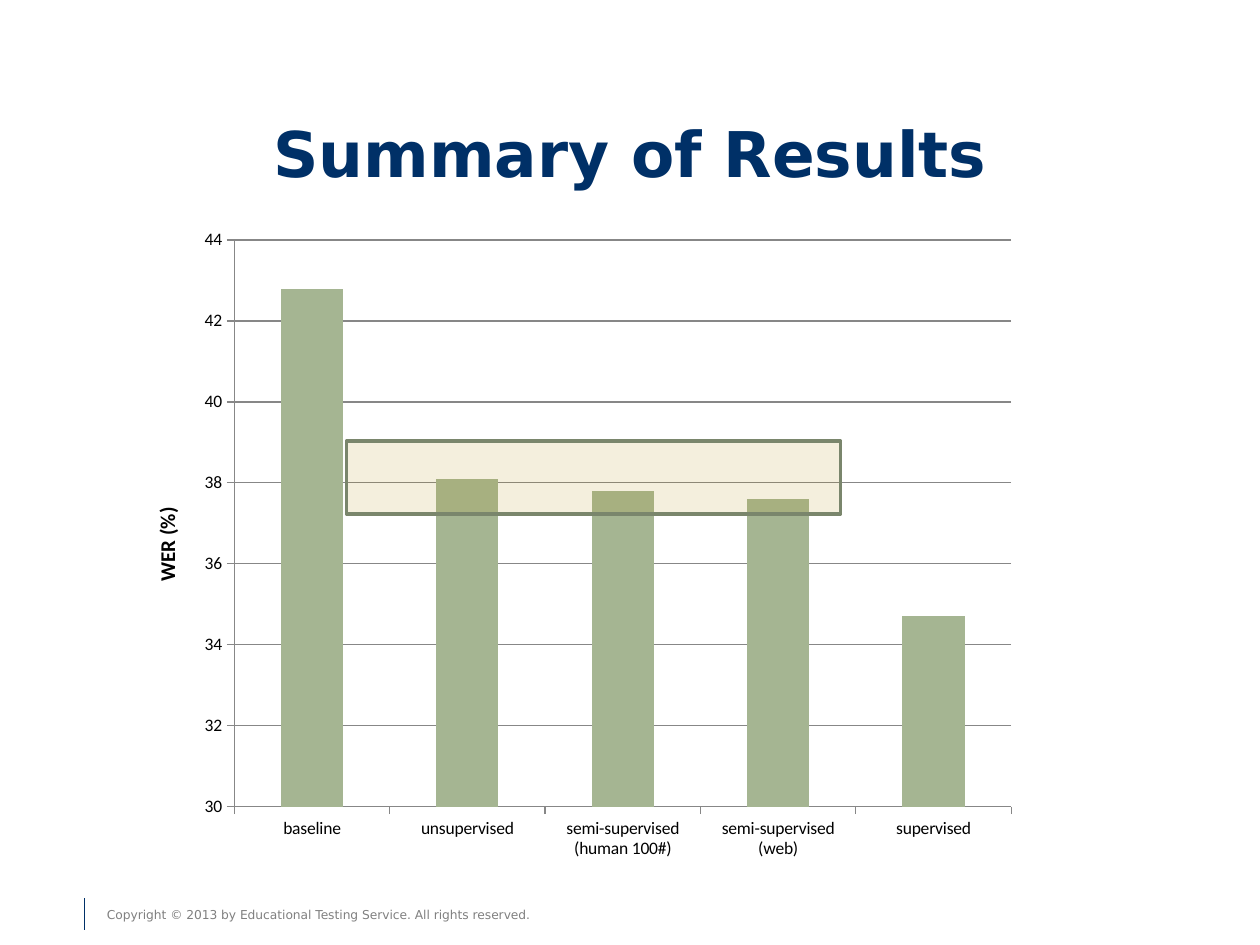
from lxml import etree
from pptx import Presentation, util as u
from pptx.chart.data import CategoryChartData
from pptx.dml.color import RGBColor
from pptx.enum import chart as ch, shapes, text
from pptx.oxml import parse_xml
from pptx.oxml.ns import nsdecls, qn

WIDTH, HEIGHT = 10, 7.5
NAVY, GREY, BLACK, AXIS = "003067", "808080", "000000", "878787"
SAGE, OLIVE, GOLD = "A5B592", "7A866C", "B79315"
TITLE_FONT, CHART_FONT = "DejaVu Sans", "Calibri"
WER = {
    "baseline": 42.8,
    "unsupervised": 38.1,
    "semi-supervised (human 100#)": 37.8,
    "semi-supervised (web)": 37.6,
    "supervised": 34.7,
}


def colour(hex_value):
    return RGBColor.from_string(hex_value)


def inches(box):
    return [u.Inches(length) for length in box]


def set_all(target, **values):
    for name, value in values.items():
        setattr(target, name, value)


def set_font(font, face, size, hex_value, bold=False):
    set_all(font, name=face, size=u.Pt(size), bold=bold)
    font.color.rgb = colour(hex_value)


def set_line(line, hex_value, width):
    line.color.rgb = colour(hex_value)
    line.width = u.Pt(width)


def place_title(slide, box):
    title = slide.shapes.title
    set_all(title, **dict(zip(("left", "top", "width", "height"), inches(box))))
    title.text_frame.text = "Summary of Results"
    title.text_frame.vertical_anchor = text.MSO_ANCHOR.MIDDLE
    heading = title.text_frame.paragraphs[0]
    heading.alignment = text.PP_ALIGN.CENTER
    set_font(heading.runs[0].font, TITLE_FONT, 36, NAVY, True)


def place_footer(slide, box):
    left, top, _, _ = box
    notice = slide.shapes.add_textbox(*inches(box)).text_frame
    notice.word_wrap = True
    notice.text = ("Copyright © 2013 by Educational Testing Service. "
                   "All rights reserved.")
    set_font(notice.paragraphs[0].runs[0].font, TITLE_FONT, 7, GREY)

    # Vertical rule beside the notice
    x, y = left - 0.08, top - 0.02
    rule = slide.shapes.add_connector(
        shapes.MSO_CONNECTOR.STRAIGHT, *inches((x, y, x, y + 0.25)))
    set_line(rule.line, NAVY, 0.75)
    etree.SubElement(rule._element.spPr, qn("a:effectLst"))


def fix_plot_area(chart, x, y, w, h):
    plot_area = chart._chartSpace.chart.plotArea
    for layout in plot_area.findall(qn("c:layout")):
        plot_area.remove(layout)
    shares = "".join(f'<c:{key} val="{share}"/>'
                     for key, share in zip("xywh", (x, y, w, h)))
    plot_area.insert(0, parse_xml(
        f'<c:layout {nsdecls("c")}><c:manualLayout><c:layoutTarget val="inner"/>'
        f'<c:xMode val="edge"/><c:yMode val="edge"/>{shares}'
        '</c:manualLayout></c:layout>'))


def place_wer_chart(slide, box):
    wer_data = CategoryChartData(number_format="General")
    wer_data.categories = list(WER)
    wer_data.add_series("Series 1", list(WER.values()))
    chart = slide.shapes.add_chart(
        ch.XL_CHART_TYPE.COLUMN_CLUSTERED, *inches(box), wer_data).chart
    set_all(chart, has_legend=False, has_title=False)
    set_font(chart.font, CHART_FONT, 10, BLACK)
    fix_plot_area(chart, 0.12, 0.03, 0.86, 0.87)

    # Columns
    set_all(chart.plots[0], gap_width=150, vary_by_categories=False)
    columns = chart.plots[0].series[0]
    columns.format.fill.solid()
    columns.format.fill.fore_color.rgb = colour(SAGE)

    # Axes
    wer_axis = chart.value_axis
    set_all(wer_axis, minimum_scale=30, maximum_scale=44, major_unit=2,
            has_major_gridlines=True, has_title=True)
    set_line(wer_axis.major_gridlines.format.line, AXIS, 0.75)
    for axis in (chart.category_axis, wer_axis):
        set_all(axis, major_tick_mark=ch.XL_TICK_MARK.OUTSIDE,
                minor_tick_mark=ch.XL_TICK_MARK.NONE)
        set_line(axis.format.line, AXIS, 0.75)
    caption = wer_axis.axis_title.text_frame
    caption.text = "WER (%)"
    set_font(caption.paragraphs[0].runs[0].font, CHART_FONT, 12, BLACK, True)
    caption._txBody.bodyPr.set("rot", "-5400000")
    caption._txBody.bodyPr.set("vert", "horz")


def place_highlight(slide, box):
    highlight = slide.shapes.add_shape(
        shapes.MSO_SHAPE.RECTANGLE, *inches(box))
    highlight.shadow.inherit = False
    highlight.fill.solid()
    highlight.fill.fore_color.rgb = colour(GOLD)
    set_line(highlight.line, OLIVE, 2)
    tint = highlight._element.spPr.find(f".//{qn('a:srgbClr')}")
    etree.SubElement(tint, qn("a:alpha")).set("val", "14000")


def main():
    deck = Presentation()
    set_all(deck, slide_width=u.Inches(WIDTH), slide_height=u.Inches(HEIGHT))
    slide = deck.slides.add_slide(deck.slide_layouts[5])
    slide.background.fill.solid()
    slide.background.fill.fore_color.rgb = colour("FFFFFF")

    margin = WIDTH / 20
    place_footer(slide, (0.75, 7.15, 6.25, 0.22))
    place_title(slide, (margin, 0.67, WIDTH - 2 * margin, 1.08))
    place_wer_chart(slide, (2 * margin, 1.75, 7.17, 5.17))
    place_highlight(slide, (2.75, 3.5, 3.92, 0.58))
    deck.save("out.pptx")


if __name__ == "__main__":
    main()
